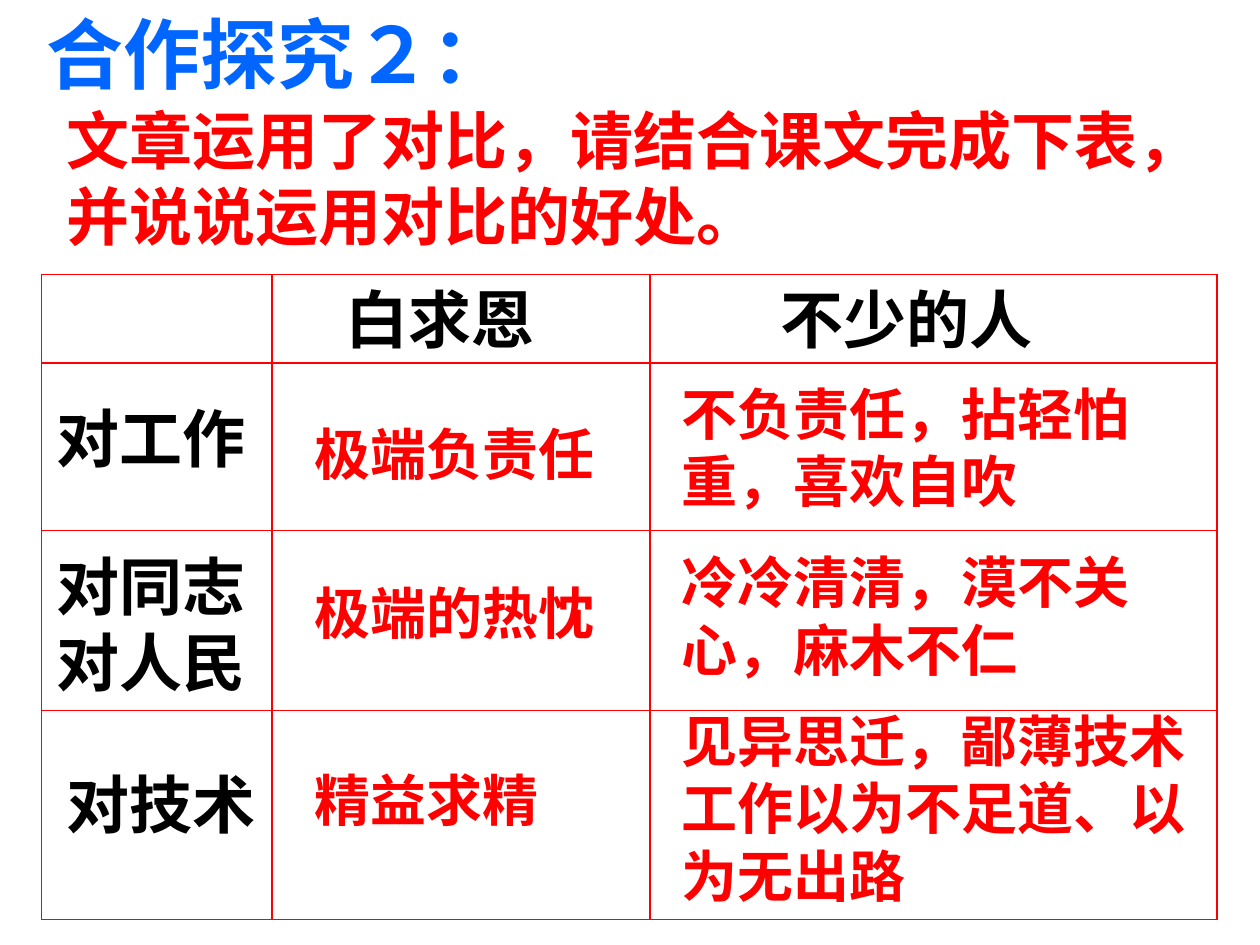
from pptx import Presentation
from pptx.dml.color import RGBColor
from pptx.enum.text import MSO_ANCHOR, PP_ALIGN
from pptx.oxml import parse_xml
from pptx.oxml.ns import nsdecls
from pptx.util import Inches, Pt

RED = RGBColor(0xFF, 0x00, 0x00)
BLUE = RGBColor(0x00, 0x66, 0xFF)
BLACK = RGBColor(0x00, 0x00, 0x00)
SANS = "DejaVu Sans"
CJK = "Noto Sans CJK SC"


class Deck:
    """Slide builder holding the current slide and its text style."""

    def __init__(self, prs):
        self.s = prs.slides.add_slide(prs.slide_layouts[5])

    def fill_text(self, sp, lines, size, color, font):
        tf = sp.text_frame
        tf.word_wrap = True
        tf.vertical_anchor = MSO_ANCHOR.TOP
        tf.text = "\n".join(lines)
        for p in tf.paragraphs:
            p.alignment = PP_ALIGN.LEFT
            p.font.name = font
            p.font.size = Pt(size)
            p.font.bold = True
            p.font.color.rgb = color

    def title(self, text, box):
        sp = self.s.shapes.title
        sp.left, sp.top, sp.width, sp.height = map(Inches, box)
        self.fill_text(sp, [text], 44, BLUE, SANS)

    def text(self, lines, box, size, color, font=SANS):
        sp = self.s.shapes.add_textbox(*map(Inches, box))
        self.fill_text(sp, lines, size, color, font)

    def grid(self, left, top, widths, heights):
        frame = self.s.shapes.add_table(
            len(heights), len(widths), Inches(left), Inches(top),
            Inches(sum(widths)), Inches(sum(heights)))
        table = frame.table
        table.first_row = table.horz_banding = False
        for col, width in zip(table.columns, widths):
            col.width = Inches(width)
        for row, height in zip(table.rows, heights):
            row.height = Inches(height)
        for cell in table.iter_cells():
            self.border(cell)

    def border(self, cell):
        cell.fill.background()
        tc_pr = cell._tc.get_or_add_tcPr()
        for i, side in enumerate(("lnL", "lnR", "lnT", "lnB")):
            tc_pr.insert(i, parse_xml(
                f'<a:{side} {nsdecls("a")} w="{Pt(1)}"><a:solidFill>'
                f'<a:srgbClr val="{RED}"/></a:solidFill></a:{side}>'))


def main():
    prs = Presentation()
    prs.slide_width, prs.slide_height = Inches(10), Inches(7.5)
    deck = Deck(prs)
    deck.title("合作探究２：", (0.27, 0, 4.89, 0.83))
    deck.text(["文章运用了对比，请结合课文完成下表，并说说运用对比的好处。"],
              (0.43, 0.76, 9.57, 1.3), 36, RED, CJK)
    deck.grid(0.33, 2.18, (1.83, 3, 4.5), (0.7, 1.33, 1.43, 1.66))

    headings = [
        (["白求恩"], (2.64, 2.18, 2.2, 0.7)),
        (["不少的人"], (6.1, 2.18, 2.84, 0.7)),
        (["对工作"], (0.35, 3.12, 2.05, 0.7)),
        (["对同志", "对人民"], (0.35, 4.3, 2.28, 1.3)),
        (["对技术"], (0.43, 6.03, 2.36, 0.7)),
    ]
    answers = [
        ("极端负责任", (2.4, 3.28, 2.91, 0.63)),
        ("极端的热忱", (2.4, 4.54, 3.07, 0.63)),
        ("精益求精", (2.4, 6.03, 2.83, 0.63)),
        ("不负责任，拈轻怕重，喜欢自吹", (5.31, 2.96, 3.84, 1.17)),
        ("冷冷清清，漠不关心，麻木不仁", (5.31, 4.3, 4.15, 1.17)),
        ("见异思迁，鄙薄技术工作以为不足道、以为无出路",
         (5.31, 5.56, 4.26, 1.7)),
    ]
    for lines, box in headings:
        deck.text(lines, box, 36, BLACK)
    for answer, box in answers:
        deck.text([answer], box, 32, RED)
    prs.save("out.pptx")


if __name__ == "__main__":
    main()
